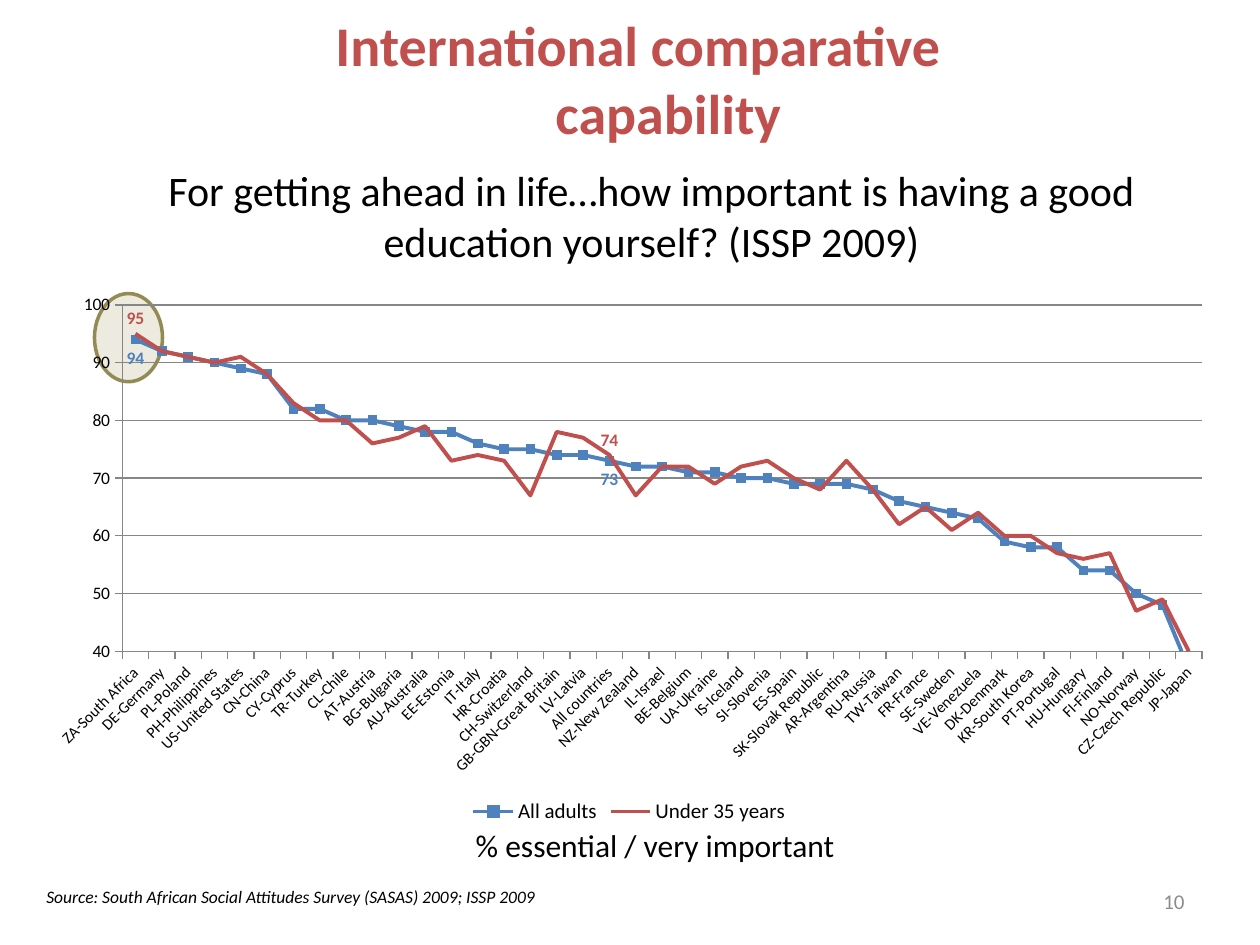
from dataclasses import dataclass

from lxml import etree
from pptx import Presentation
from pptx.chart.data import CategoryChartData
from pptx.dml.color import RGBColor
from pptx.enum.chart import (XL_CHART_TYPE, XL_LABEL_POSITION, XL_LEGEND_POSITION,
                             XL_MARKER_STYLE, XL_TICK_MARK)
from pptx.enum.shapes import MSO_SHAPE
from pptx.enum.text import MSO_ANCHOR, PP_ALIGN
from pptx.oxml.ns import qn
from pptx.util import Inches, Pt

LEFT, CENTER, RIGHT = PP_ALIGN.LEFT, PP_ALIGN.CENTER, PP_ALIGN.RIGHT
TOP, MIDDLE = MSO_ANCHOR.TOP, MSO_ANCHOR.MIDDLE
ABOVE, BELOW = XL_LABEL_POSITION.ABOVE, XL_LABEL_POSITION.BELOW
SQUARE, NO_MARKER = XL_MARKER_STYLE.SQUARE, XL_MARKER_STYLE.NONE
FONT = "Calibri"
BLACK, GRAY, AXIS_GRAY = "000000", "8C8C8C", "868686"
BLUE, RED = "4F81BD", "C0504D"
CHART_AT = (0.27, 2.25, 9.45, 4.33)
PLOT_AT = (0.97, 2.42, 8.57, 2.75)
LABELLED_COUNTRIES = ("ZA-South Africa", "All countries")

COUNTRIES = [
    "ZA-South Africa", "DE-Germany", "PL-Poland", "PH-Philippines", "US-United States",
    "CN-China", "CY-Cyprus", "TR-Turkey", "CL-Chile", "AT-Austria", "BG-Bulgaria",
    "AU-Australia", "EE-Estonia", "IT-Italy", "HR-Croatia", "CH-Switzerland",
    "GB-GBN-Great Britain", "LV-Latvia", "All countries", "NZ-New Zealand", "IL-Israel",
    "BE-Belgium", "UA-Ukraine", "IS-Iceland", "SI-Slovenia", "ES-Spain",
    "SK-Slovak Republic", "AR-Argentina", "RU-Russia", "TW-Taiwan", "FR-France",
    "SE-Sweden", "VE-Venezuela", "DK-Denmark", "KR-South Korea", "PT-Portugal",
    "HU-Hungary", "FI-Finland", "NO-Norway", "CZ-Czech Republic", "JP-Japan",
]


@dataclass
class TextItem:
    text: str
    at: tuple
    size: int
    color: str = BLACK
    align: PP_ALIGN = CENTER
    anchor: MSO_ANCHOR = TOP
    bold: bool = False
    italic: bool = False
    margin: float = 0
    indent: float = 0


@dataclass
class Line:
    name: str
    color: str
    marker: XL_MARKER_STYLE
    label_position: XL_LABEL_POSITION
    values: list


TEXTS = [
    TextItem("International comparative \vcapability", (0.51, 0.16, 9.21, 0.92), 32, RED,
             anchor=MIDDLE, bold=True, margin=0.38, indent=-0.38),
    TextItem("Source: South African Social Attitudes Survey (SASAS) 2009; ISSP 2009",
             (0.27, 6.98, 7.56, 0.26), 10, align=LEFT, italic=True),
    TextItem("10", (7.17, 6.95, 2.33, 0.4), 12, GRAY, RIGHT, MIDDLE),
    TextItem("For getting ahead in life…how important is having a good education "
             "yourself? (ISSP 2009)", (0.51, 1.26, 8.82, 0.91), 24, margin=0.5),
    TextItem("% essential / very important", (3.35, 6.51, 3.7, 0.4), 18),
]

LINES = [
    Line("All adults", BLUE, SQUARE, BELOW,
         [94, 92, 91, 90, 89, 88, 82, 82, 80, 80, 79, 78, 78, 76, 75, 75, 74, 74, 73, 72, 72,
          71, 71, 70, 70, 69, 69, 69, 68, 66, 65, 64, 63, 59, 58, 58, 54, 54, 50, 48, 37]),
    Line("Under 35 years", RED, NO_MARKER, ABOVE,
         [95, 92, 91, 90, 91, 88, 83, 80, 80, 76, 77, 79, 73, 74, 73, 67, 78, 77, 74, 67, 72,
          72, 69, 72, 73, 70, 68, 73, 68, 62, 65, 61, 64, 60, 60, 57, 56, 57, 47, 49, 40]),
]


def rgb(color: str) -> RGBColor:
    return RGBColor.from_string(color)


def place(at: tuple) -> list:
    return [Inches(length) for length in at]


def style_font(font, size: int, color: str = BLACK, bold: bool = False) -> None:
    font.name, font.size, font.bold = FONT, Pt(size), bold
    font.color.rgb = rgb(color)


def add_text(page, item: TextItem) -> None:
    box = page.shapes.add_textbox(*place(item.at))
    frame = box.text_frame
    frame.word_wrap, frame.vertical_anchor = True, item.anchor
    para = frame.paragraphs[0]
    para.text, para.alignment = item.text, item.align
    properties = para._p.get_or_add_pPr()
    properties.set("marL", str(Inches(item.margin)))
    properties.set("indent", str(Inches(item.indent)))
    style_font(para.font, item.size, item.color, item.bold)
    para.font.italic = item.italic


def add_highlight(page) -> None:
    ellipse = page.shapes.add_shape(MSO_SHAPE.OVAL, *place((0.75, 2.33, 0.54, 0.7)))
    ellipse.shadow.inherit = False
    ellipse.fill.solid()
    ellipse.fill.fore_color.rgb = rgb("C4BD97")
    fill_color = ellipse._element.spPr.find(qn("a:solidFill"))[0]
    etree.SubElement(fill_color, qn("a:alpha")).set("val", "30000")
    ellipse.line.color.rgb = rgb("948A54")
    ellipse.line.width = Pt(2)


def set_plot_area(chart) -> None:
    """Fix the inner plot area, as fractions of the chart frame."""
    chart_left, chart_top, chart_width, chart_height = CHART_AT
    left, top, width, height = PLOT_AT
    settings = {"layoutTarget": "inner", "xMode": "edge", "yMode": "edge",
                "x": (left - chart_left) / chart_width,
                "y": (top - chart_top) / chart_height,
                "w": width / chart_width, "h": height / chart_height}
    plot_area = chart._chartSpace.chart.plotArea
    for old in plot_area.findall(qn("c:layout")):
        plot_area.remove(old)
    layout = etree.Element(qn("c:layout"))
    manual = etree.SubElement(layout, qn("c:manualLayout"))
    for name, value in settings.items():
        etree.SubElement(manual, qn(f"c:{name}")).set("val", str(value))
    plot_area.insert(0, layout)


def style_axes(chart) -> None:
    countries, percent = chart.category_axis, chart.value_axis
    for axis, size in ((countries, 9), (percent, 10)):
        axis.major_tick_mark = XL_TICK_MARK.OUTSIDE
        axis.minor_tick_mark = XL_TICK_MARK.NONE
        axis.format.line.color.rgb = rgb(AXIS_GRAY)
        style_font(axis.tick_labels.font, size)
    percent.minimum_scale, percent.maximum_scale, percent.major_unit = 40, 100, 10
    percent.tick_labels.number_format = "0"
    percent.tick_labels.number_format_is_linked = False
    percent.major_gridlines.format.line.color.rgb = rgb(AXIS_GRAY)

    # Slanted names, one for every country
    element = countries._element
    element.find(qn("c:txPr")).find(qn("a:bodyPr")).set("rot", "-2700000")
    skip = etree.Element(qn("c:tickLblSkip"))
    skip.set("val", "1")
    element.find(qn("c:noMultiLvlLbl")).addprevious(skip)


def style_line(series, line: Line) -> None:
    series.smooth = False
    series.format.line.color.rgb = rgb(line.color)
    series.format.line.width = Pt(2.25)
    series.marker.style = line.marker
    if line.marker != NO_MARKER:
        series.marker.size = 5
        series.marker.format.fill.solid()
        series.marker.format.fill.fore_color.rgb = rgb(line.color)
        series.marker.format.line.color.rgb = rgb(line.color)
    series.data_labels.show_value = False
    for country in LABELLED_COUNTRIES:
        label = series.points[COUNTRIES.index(country)].data_label
        style_font(label.font, 10, line.color, bold=True)
        label.position = line.label_position


def add_line_chart(page) -> None:
    data = CategoryChartData(number_format="0")
    data.categories = COUNTRIES
    for line in LINES:
        data.add_series(line.name, line.values)
    chart = page.shapes.add_chart(XL_CHART_TYPE.LINE_MARKERS, *place(CHART_AT), data).chart
    chart.has_title = False
    style_font(chart.font, 10)
    chart.plots[0].vary_by_categories = False
    chart.has_legend = True
    chart.legend.position = XL_LEGEND_POSITION.BOTTOM
    chart.legend.include_in_layout = False
    style_font(chart.legend.font, 12)
    set_plot_area(chart)
    style_axes(chart)
    for series, line in zip(chart.plots[0].series, LINES):
        style_line(series, line)


def main() -> None:
    deck = Presentation()
    deck.slide_width, deck.slide_height = Inches(10), Inches(7.5)
    page = deck.slides.add_slide(deck.slide_layouts[6])
    # The highlight lies behind the chart
    add_highlight(page)
    add_line_chart(page)
    for item in TEXTS:
        add_text(page, item)
    deck.save("out.pptx")


if __name__ == "__main__":
    main()
